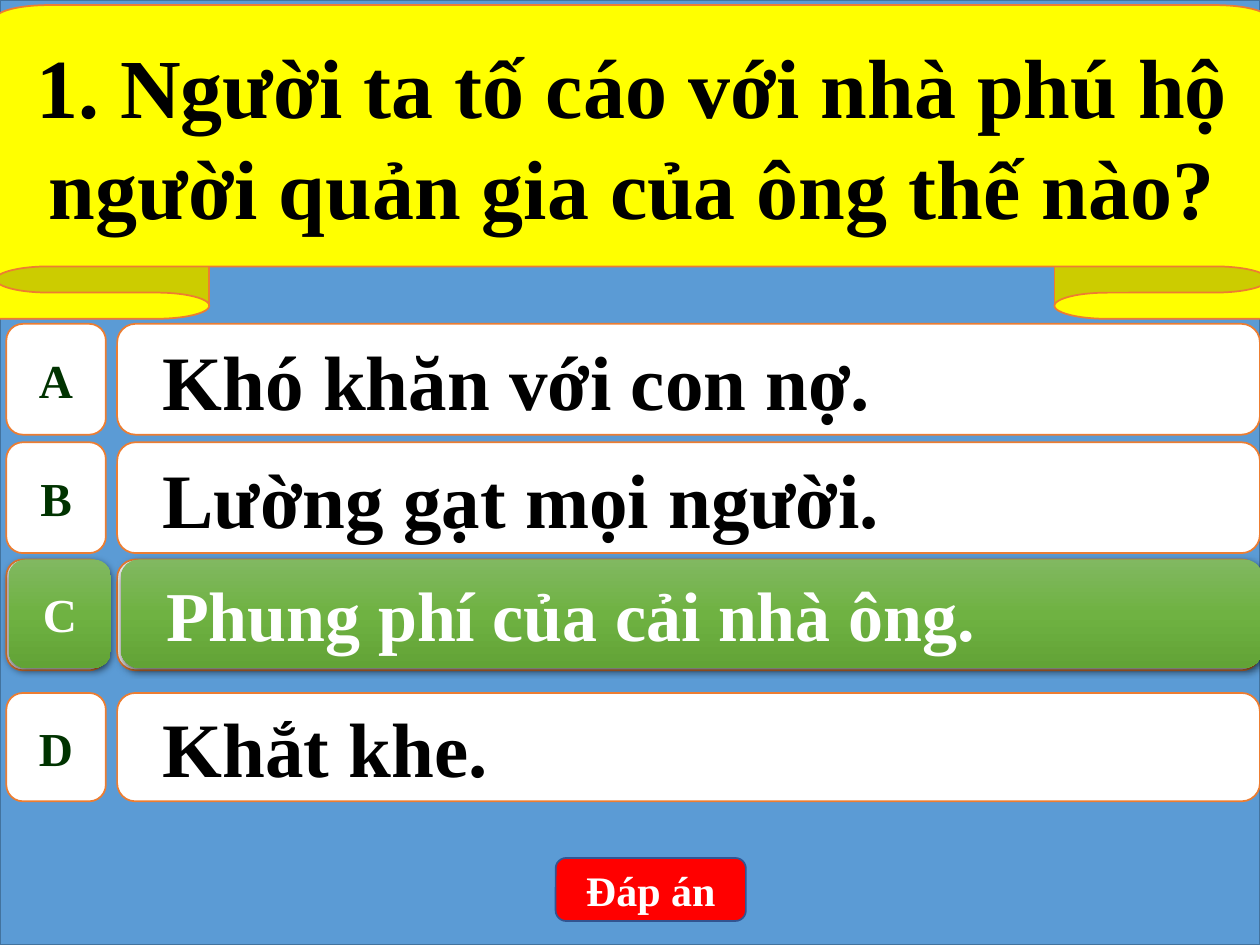
"""Build a quiz slide with one question, four choices and the answer revealed."""
from copy import deepcopy

from lxml import etree
from pptx import Presentation
from pptx.dml.color import RGBColor
from pptx.enum.shapes import MSO_SHAPE
from pptx.enum.text import MSO_ANCHOR, PP_ALIGN
from pptx.oxml.ns import qn
from pptx.util import Inches, Pt

RECT = MSO_SHAPE.RECTANGLE
ROUNDED = MSO_SHAPE.ROUNDED_RECTANGLE
BADGE = MSO_SHAPE.FLOWCHART_ALTERNATE_PROCESS
RIBBON = MSO_SHAPE.UP_RIBBON
MIDDLE = MSO_ANCHOR.MIDDLE
CENTER, LEFT = PP_ALIGN.CENTER, PP_ALIGN.LEFT

FONT = "Times New Roman"
BLUE = RGBColor(0x5B, 0x9B, 0xD5)
BLUE_LINE = RGBColor(0x43, 0x73, 0x9E)
YELLOW = RGBColor(0xFF, 0xFF, 0x00)
ORANGE = RGBColor(0xED, 0x7D, 0x31)
RED = RGBColor(0xFF, 0x00, 0x00)
BUTTON_LINE = RGBColor(0x32, 0x54, 0x91)
WHITE = RGBColor(0xFF, 0xFF, 0xFF)
BLACK = RGBColor(0x00, 0x00, 0x00)
DARK_GREEN = RGBColor(0x00, 0x33, 0x00)
GREENS = (RGBColor(0x81, 0xB8, 0x61), RGBColor(0x6F, 0xB2, 0x42),
          RGBColor(0x62, 0xA3, 0x36))

QUESTION = "1. Người ta tố cáo với nhà phú hộ người quản gia của ông thế nào?"
CHOICES = [
    ("A", "Khó khăn với con nợ.", 44, 2.57, 0.88),
    ("B", "Lường gạt mọi người.", 44, 3.51, 0.88),
    ("C", "Phung phí của cải nhà ông.", 40, 4.44, 0.88),
    ("D", "Khắt khe.", 44, 5.5, 0.86),
]


def add_box(shapes, kind, left, top, width, height, fill=None, line=None, adj=()):
    """Add a preset shape without shadow."""
    sp = shapes.add_shape(kind, Inches(left), Inches(top), Inches(width), Inches(height))
    sp.shadow.inherit = False
    for i, value in enumerate(adj):
        sp.adjustments[i] = value
    if fill is not None:
        sp.fill.solid()
        sp.fill.fore_color.rgb = fill
    if line is None:
        sp.line.fill.background()
    else:
        sp.line.color.rgb = line
        sp.line.width = Pt(1)
    return sp


def set_text(sp, text, size, color, align=CENTER, wrap=True, hanging=False):
    """Write one bold paragraph in the middle of a shape."""
    tf = sp.text_frame
    tf.word_wrap = wrap
    tf.vertical_anchor = MIDDLE
    p = tf.paragraphs[0]
    p.alignment = align
    if hanging:
        p.level = 1
        pPr = p._p.get_or_add_pPr()
        pPr.set("marL", str(Inches(0.5)))
        pPr.set("indent", str(Inches(-0.28)))
    r = p.add_run()
    r.text = text
    r.font.name = FONT
    r.font.size = Pt(size)
    r.font.bold = True
    r.font.color.rgb = color


def highlight(sp):
    """Give a shape the green gradient and a soft shadow below it."""
    sp.fill.gradient()
    sp.fill.gradient_angle = 270
    stop_list = sp._element.spPr.find(qn("a:gradFill")).find(qn("a:gsLst"))
    stop_list.append(deepcopy(stop_list[-1]))
    for stop, position, color in zip(sp.fill.gradient_stops, (0, 0.5, 1), GREENS):
        stop.position = position
        stop.color.rgb = color
    effects = sp._element.spPr.find(qn("a:effectLst"))
    shadow = etree.SubElement(effects, qn("a:outerShdw"), blurRad=str(Pt(4.5)),
                              dist=str(Pt(1.5)), dir="5400000", algn="ctr",
                              rotWithShape="0")
    color = etree.SubElement(shadow, qn("a:srgbClr"), val=str(BLACK))
    etree.SubElement(color, qn("a:alpha"), val="63000")


def add_choice(s, letter, answer, size, top, height, revealed=False):
    """Add a group with the letter badge and the answer bar."""
    shapes = s.shapes.add_group_shape().shapes
    if revealed:
        badge = add_box(shapes, BADGE, 0.07, top, 0.81, height)
        bar = add_box(shapes, ROUNDED, 0.96, top, 9.06, height)
        highlight(badge)
        highlight(bar)
    else:
        badge = add_box(shapes, BADGE, 0.05, top, 0.79, height, WHITE, ORANGE)
        bar = add_box(shapes, ROUNDED, 0.93, top, 9.07, height, WHITE, ORANGE)
    set_text(badge, letter, 27, WHITE if revealed else DARK_GREEN, wrap=False)
    set_text(bar, answer, size, WHITE if revealed else BLACK, LEFT, hanging=True)


def main():
    """Build and save the slide."""
    prs = Presentation()
    prs.slide_width, prs.slide_height = Inches(10), Inches(7.5)
    s = prs.slides.add_slide(prs.slide_layouts[6])

    add_box(s.shapes, RECT, 0, 0, 10, 7.5, BLUE, BLUE_LINE)
    banner = add_box(s.shapes, RIBBON, -1.76, 0.04, 13.55, 2.49, YELLOW, ORANGE,
                     adj=(0.167, 0.745))
    set_text(banner, QUESTION, 48, BLACK)
    button = add_box(s.shapes, ROUNDED, 4.41, 6.81, 1.51, 0.5, RED, BUTTON_LINE)
    set_text(button, "Đáp án", 24, WHITE)

    for choice in CHOICES:
        add_choice(s, *choice)
    letter, answer, size, top, _ = CHOICES[2]
    add_choice(s, letter, answer, size, top, 0.86, revealed=True)

    prs.save("out.pptx")


if __name__ == "__main__":
    main()
